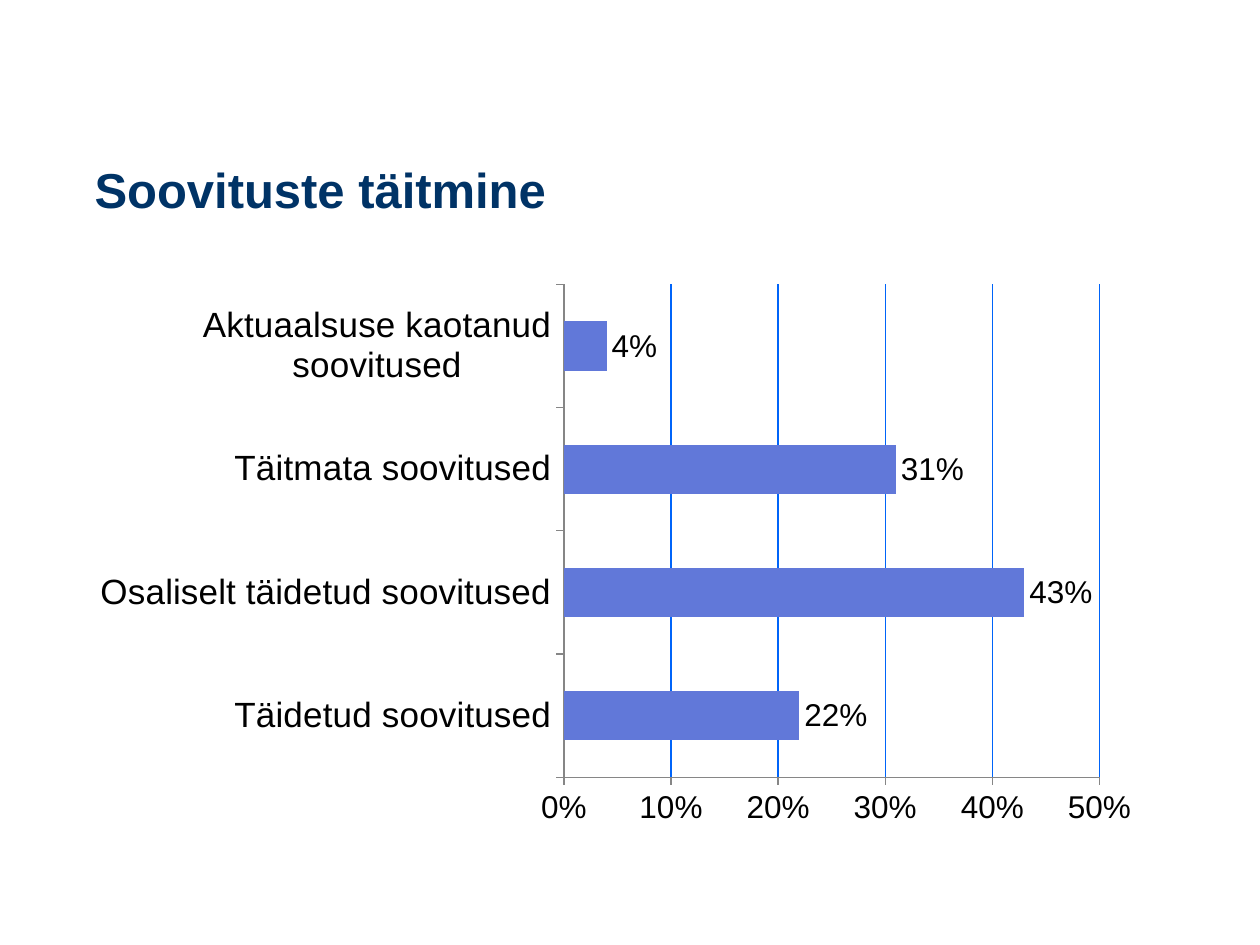
from dataclasses import dataclass

from lxml.etree import SubElement
from pptx import Presentation
from pptx.chart.data import CategoryChartData
from pptx.dml.color import RGBColor
from pptx.enum.chart import XL_CHART_TYPE, XL_LABEL_POSITION, XL_TICK_MARK
from pptx.enum.text import MSO_ANCHOR, PP_ALIGN
from pptx.oxml.ns import qn
from pptx.util import Emu, Pt

EMU_PER_PX = 914400 / 126
TITLE_ONLY = 5


@dataclass(frozen=True)
class Theme:
    font: str = "Arial"
    title_color: RGBColor = RGBColor(0x00, 0x33, 0x66)
    text_color: RGBColor = RGBColor(0x00, 0x00, 0x00)
    bar_color: RGBColor = RGBColor(0x61, 0x78, 0xD9)
    grid_color: RGBColor = RGBColor(0x00, 0x64, 0xF9)
    axis_color: RGBColor = RGBColor(0x86, 0x86, 0x86)
    title_size: int = 28
    category_size: int = 20
    value_size: int = 18
    line_width: float = 0.75


def px(length):
    return Emu(round(length * EMU_PER_PX))


class SlideBuilder:
    def __init__(self, presentation, theme):
        self.theme = theme
        self.slide = presentation.slides.add_slide(presentation.slide_layouts[TITLE_ONLY])

    def style_font(self, font, size, color=None, bold=False):
        font.name = self.theme.font
        font.size = Pt(size)
        font.bold = bold
        font.color.rgb = color or self.theme.text_color

    def style_line(self, line, color):
        line.color.rgb = color
        line.width = Pt(self.theme.line_width)

    def title(self, text, left, top, width, height):
        shape = self.slide.shapes.title
        shape.left, shape.top, shape.width, shape.height = map(px, (left, top, width, height))
        text_frame = shape.text_frame
        text_frame.text = text
        text_frame.vertical_anchor = MSO_ANCHOR.MIDDLE
        paragraph = text_frame.paragraphs[0]
        paragraph.alignment = PP_ALIGN.LEFT
        self.style_font(paragraph.runs[0].font, self.theme.title_size,
                        self.theme.title_color, bold=True)

    def axis(self, axis, size):
        axis.major_tick_mark = XL_TICK_MARK.OUTSIDE
        axis.minor_tick_mark = XL_TICK_MARK.NONE
        self.style_font(axis.tick_labels.font, size)
        self.style_line(axis.format.line, self.theme.axis_color)

    def plot_layout(self, chart, **fractions):
        plot_area = chart._chartSpace.chart.plotArea
        for old_layout in plot_area.findall(qn("c:layout")):
            plot_area.remove(old_layout)
        layout = SubElement(plot_area, qn("c:layout"))
        plot_area.insert(0, layout)
        manual = SubElement(layout, qn("c:manualLayout"))
        settings = {"layoutTarget": "inner", "xMode": "edge", "yMode": "edge", **fractions}
        for name, value in settings.items():
            SubElement(manual, qn(f"c:{name}")).set("val", str(value))

    def bar_chart(self, values, left, top, width, height):
        data = CategoryChartData(number_format="0%")
        data.categories = list(values)
        data.add_series("Series 1", list(values.values()))
        frame = self.slide.shapes.add_chart(
            XL_CHART_TYPE.BAR_CLUSTERED, *map(px, (left, top, width, height)), data)
        chart = frame.chart
        chart.has_title = False
        chart.has_legend = False
        self.style_font(chart.font, self.theme.value_size)
        self.plot_layout(chart, x=0.45, y=0.02, w=0.5, h=0.87)

        # Axes and gridlines
        self.axis(chart.category_axis, self.theme.category_size)
        value_axis = chart.value_axis
        self.axis(value_axis, self.theme.value_size)
        value_axis.minimum_scale, value_axis.maximum_scale = 0, 0.5
        value_axis.major_unit = 0.1
        value_axis.tick_labels.number_format = "0%"
        value_axis.tick_labels.number_format_is_linked = False
        value_axis.has_major_gridlines = True
        self.style_line(value_axis.major_gridlines.format.line, self.theme.grid_color)

        # Bars and their labels
        plot = chart.plots[0]
        plot.gap_width = 150
        plot.vary_by_categories = False
        series = plot.series[0]
        series.format.fill.solid()
        series.format.fill.fore_color.rgb = self.theme.bar_color
        labels = series.data_labels
        labels.show_value = True
        labels.position = XL_LABEL_POSITION.OUTSIDE_END
        labels.number_format = "0%"
        labels.number_format_is_linked = False
        self.style_font(labels.font, self.theme.value_size)


def main():
    presentation = Presentation()
    presentation.slide_width, presentation.slide_height = px(1260), px(945)
    builder = SlideBuilder(presentation, Theme())

    # Heading
    builder.title("Soovituste täitmine", 82, 126, 1071, 126)

    # Share of recommendations by status, from the bottom bar up
    shares = {
        "Täidetud soovitused": 0.22,
        "Osaliselt täidetud soovitused": 0.43,
        "Täitmata soovitused": 0.31,
        "Aktuaalsuse kaotanud soovitused": 0.04,
    }
    builder.bar_chart(shares, 82, 273, 1071, 567)

    presentation.save("out.pptx")


if __name__ == "__main__":
    main()
